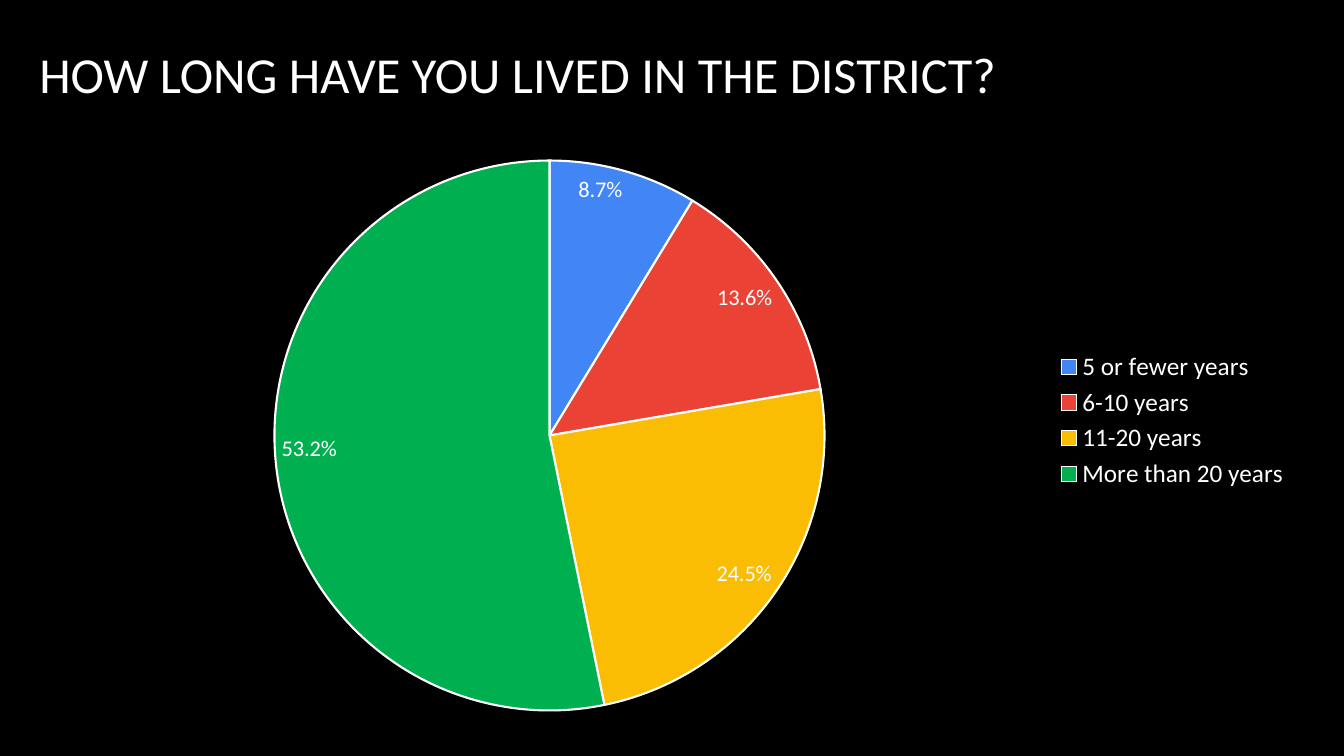
from dataclasses import dataclass

import lxml.etree
import pptx
import pptx.chart.data
import pptx.dml.color
import pptx.enum.chart
import pptx.enum.text
import pptx.oxml.ns
import pptx.util

Inches = pptx.util.Inches
FONT_NAME = "Calibri"
COLORS = {
    "background": "000000",
    "text": "FFFFFF",
    "blue": "4285F4",
    "red": "EA4335",
    "yellow": "FBBC04",
    "green": "00B050",
}


@dataclass(frozen=True)
class Answer:
    label: str
    percent: float
    color: str


ANSWERS = [
    Answer("5 or fewer years", 8.7, "blue"),
    Answer("6-10 years", 13.6, "red"),
    Answer("11-20 years", 24.5, "yellow"),
    Answer("More than 20 years", 53.2, "green"),
]


def rgb(name: str) -> pptx.dml.color.RGBColor:
    return pptx.dml.color.RGBColor.from_string(COLORS[name])


def format_font(font, size: float, color: str = "text") -> None:
    font.name = FONT_NAME
    font.size = pptx.util.Pt(size)
    font.bold = False
    font.color.rgb = rgb(color)


def write_text(shape, text: str, *, size: float, color: str = "text",
               alignment=pptx.enum.text.PP_ALIGN.LEFT,
               anchor=pptx.enum.text.MSO_ANCHOR.MIDDLE) -> None:
    frame = shape.text_frame
    frame.word_wrap = True
    frame.auto_size = pptx.enum.text.MSO_AUTO_SIZE.NONE
    frame.vertical_anchor = anchor
    paragraph = frame.paragraphs[0]
    paragraph.alignment = alignment
    run = paragraph.add_run()
    run.text = text
    format_font(run.font, size, color)


def place_plot(chart, **fractions: float) -> None:
    """Fix the pie's inner area as fractions (x, y, w, h) of the chart."""
    qualify = pptx.oxml.ns.qn
    plot_area = chart.element.find(f".//{qualify('c:plotArea')}")
    layout = plot_area.find(qualify("c:layout"))
    if layout is None:
        layout = lxml.etree.SubElement(plot_area, qualify("c:layout"))
        plot_area.insert(0, layout)
    manual = lxml.etree.SubElement(layout, qualify("c:manualLayout"))
    settings = {"layoutTarget": "inner", "xMode": "edge", "yMode": "edge", **fractions}
    for tag, value in settings.items():
        lxml.etree.SubElement(manual, qualify(f"c:{tag}")).set("val", str(value))


def add_answer_pie(slide, answers: list[Answer]) -> None:
    data = pptx.chart.data.CategoryChartData()
    data.categories = [answer.label for answer in answers]
    data.add_series("Series 1", [answer.percent for answer in answers])
    chart = slide.shapes.add_chart(
        pptx.enum.chart.XL_CHART_TYPE.PIE,
        Inches(0.49), Inches(1.15), Inches(12.4), Inches(6.04), data,
    ).chart
    chart.has_title = False
    format_font(chart.font, 10)
    place_plot(chart, x=0.18, y=0.07, w=0.44, h=0.91)

    chart.has_legend = True
    chart.legend.position = pptx.enum.chart.XL_LEGEND_POSITION.RIGHT
    chart.legend.include_in_layout = False
    format_font(chart.legend.font, 18)

    plot = chart.plots[0]
    plot.vary_by_categories = True
    for index, answer in enumerate(answers):
        point_format = plot.series[0].points[index].format
        point_format.fill.solid()
        point_format.fill.fore_color.rgb = rgb(answer.color)
        point_format.line.color.rgb = rgb("text")
        point_format.line.width = pptx.util.Pt(1.5)

    labels = plot.series[0].data_labels
    labels.show_percentage = True
    labels.show_value = False
    labels.number_format = "0.0%"
    labels.number_format_is_linked = False
    labels.position = pptx.enum.chart.XL_LABEL_POSITION.INSIDE_END
    format_font(labels.font, 16)


def main() -> None:
    presentation = pptx.Presentation()
    presentation.slide_width = Inches(13.33)
    presentation.slide_height = Inches(7.5)
    slide = presentation.slides.add_slide(presentation.slide_layouts[5])
    slide.background.fill.solid()
    slide.background.fill.fore_color.rgb = rgb("background")

    title = slide.shapes.title
    title.left, title.top = Inches(0.29), Inches(0.31)
    title.width, title.height = Inches(11.08), Inches(0.84)
    write_text(title, "HOW LONG HAVE YOU LIVED IN THE DISTRICT?", size=36)

    add_answer_pie(slide, ANSWERS)
    presentation.save("out.pptx")


if __name__ == "__main__":
    main()
